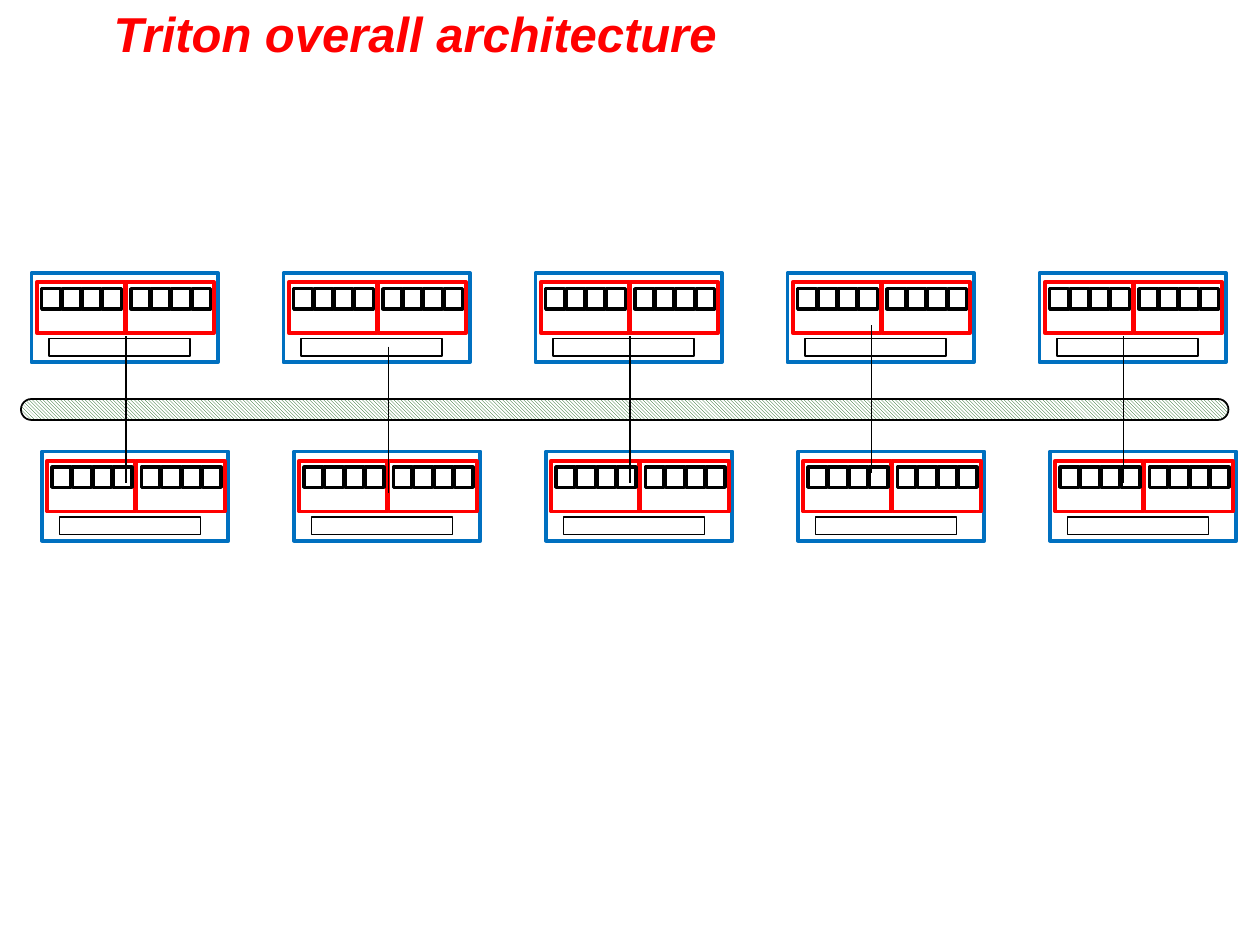
from pptx import Presentation
from pptx.dml.color import RGBColor
from pptx.enum.dml import MSO_PATTERN
from pptx.enum.shapes import MSO_CONNECTOR, MSO_SHAPE
from pptx.enum.text import MSO_ANCHOR, MSO_AUTO_SIZE, PP_ALIGN
from pptx.oxml.ns import qn
from pptx.util import Pt
from lxml.etree import SubElement

RED = RGBColor(0xFF, 0x00, 0x00)
BLUE = RGBColor(0x00, 0x70, 0xC0)
BLACK = RGBColor(0x00, 0x00, 0x00)
GREEN = RGBColor(0x00, 0x54, 0x00)
WHITE = RGBColor(0xFF, 0xFF, 0xFF)

NODES_PER_ROW = 5
NODE_PITCH = 144
NODE_ROWS = [(18, 156), (24, 258)]
CPU_PITCH = 51
CELL_PITCH = 11.6
LINK_LENGTH = 84
LINKS = [(72, 192), (222, 198), (360, 192), (498, 186), (642, 192)]


def add_title(s, text):
    sp = s.shapes.title
    sp.left, sp.top, sp.width, sp.height = Pt(60), Pt(0), Pt(366), Pt(38)
    tf = sp.text_frame
    tf.text = text
    tf.margin_left = tf.margin_right = Pt(5)
    tf.margin_top = tf.margin_bottom = Pt(2)
    tf.word_wrap = False
    tf.auto_size = MSO_AUTO_SIZE.SHAPE_TO_FIT_TEXT
    tf.vertical_anchor = MSO_ANCHOR.MIDDLE
    p = tf.paragraphs[0]
    p.alignment = PP_ALIGN.LEFT
    font = p.font
    font.name, font.size = "Arial", Pt(28)
    font.bold = font.italic = True
    font.color.rgb = RED


def add_box(shapes, x, y, w, h, color, weight, kind=MSO_SHAPE.RECTANGLE):
    sp = shapes.add_shape(kind, Pt(x), Pt(y), Pt(w), Pt(h))
    sp.shadow.inherit = False
    sp.fill.background()
    sp.line.color.rgb = color
    sp.line.width = Pt(weight)
    return sp


def add_bus(s):
    sp = add_box(s.shapes, 12, 228, 690, 12, BLACK, 1, MSO_SHAPE.ROUNDED_RECTANGLE)
    sp.adjustments[0] = 0.5
    sp.fill.patterned()
    sp.fill.pattern = MSO_PATTERN.LIGHT_DOWNWARD_DIAGONAL
    sp.fill.fore_color.rgb = GREEN
    sp.fill.back_color.rgb = WHITE


def add_node(s, x, y):
    shapes = s.shapes.add_group_shape().shapes
    add_box(shapes, x, y, 106.5, 51, BLUE, 2.25)
    add_box(shapes, x + 10, y + 37.5, 80.6, 10, BLACK, 1)
    for cpu in range(2):
        cpu_x = x + 3 + cpu * CPU_PITCH
        add_box(shapes, cpu_x, y + 5.3, 50.4, 29, RED, 2.25)
        for cell in range(4):
            add_box(shapes, cpu_x + 2.8 + cell * CELL_PITCH, y + 9, 10.8, 11.5, BLACK, 2)


def add_link(s, x, y):
    c = s.shapes.add_connector(
        MSO_CONNECTOR.STRAIGHT, Pt(x), Pt(y), Pt(x), Pt(y + LINK_LENGTH))
    c.line.color.rgb = BLACK
    c.line.width = Pt(1)
    SubElement(c._element.spPr, qn("a:effectLst"))


def main():
    prs = Presentation()
    prs.slide_width, prs.slide_height = Pt(720), Pt(540)
    s = prs.slides.add_slide(prs.slide_layouts[5])
    add_title(s, "Triton overall architecture")
    add_bus(s)
    for x, y in NODE_ROWS:
        for i in range(NODES_PER_ROW):
            add_node(s, x + i * NODE_PITCH, y)
    for x, y in LINKS:
        add_link(s, x, y)
    prs.save("out.pptx")


if __name__ == "__main__":
    main()
